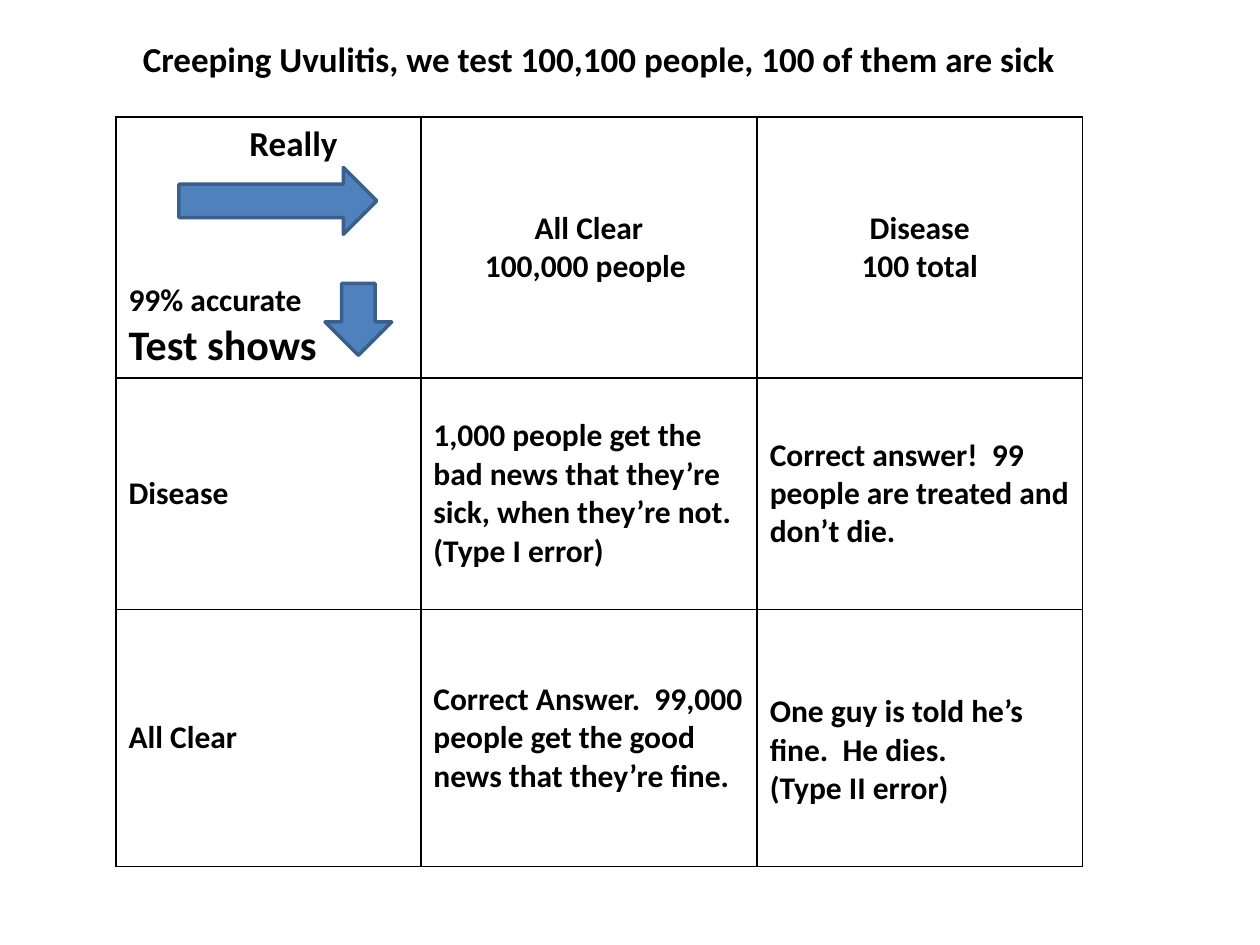
from dataclasses import dataclass

from lxml.etree import SubElement
from pptx import Presentation
from pptx.dml.color import RGBColor
from pptx.enum.shapes import MSO_SHAPE
from pptx.enum.text import MSO_ANCHOR, PP_ALIGN
from pptx.oxml.ns import qn
from pptx.util import Inches, Pt


@dataclass(frozen=True)
class Theme:
    font: str = "Calibri"
    text: str = "000000"
    border: str = "000000"
    arrow_fill: str = "4F81BD"
    arrow_line: str = "3A5F8C"
    body_size: int = 18
    title_size: int = 20
    large_size: int = 24


THEME = Theme()
TABLE_LEFT, TABLE_TOP = 0.92, 0.93
COLUMN_WIDTHS = (2.42, 2.67, 2.58)
ROW_HEIGHTS = (2.06, 1.84, 2.04)

# Each cell is a list of paragraphs
OUTCOMES = [
    [["Really", "99% accurate", "Test shows"],
     ["All Clear", "100,000 people "],
     ["Disease", "100 total"]],
    [["Disease"],
     ["1,000 people get the bad news that they’re sick, when they’re not.",
      "(Type I error)"],
     ["Correct answer!  99 people are treated and don’t die."]],
    [["All Clear"],
     ["Correct Answer.  99,000 people get the good news that they’re fine."],
     ["One guy is told he’s fine.  He dies.", "(Type II error)"]],
]


def write_text(text_frame, lines, size=THEME.body_size, align=PP_ALIGN.LEFT):
    text_frame.text = "\n".join(lines)
    for paragraph in text_frame.paragraphs:
        paragraph.alignment = align
        for run in paragraph.runs:
            font = run.font
            font.name, font.size, font.bold = THEME.font, Pt(size), True
            font.color.rgb = RGBColor.from_string(THEME.text)


def draw_cell_borders(cell):
    properties = cell._tc.get_or_add_tcPr()
    for side in ("a:lnL", "a:lnR", "a:lnT", "a:lnB"):
        line = SubElement(properties, qn(side), w=str(Pt(1)))
        fill = SubElement(line, qn("a:solidFill"))
        SubElement(fill, qn("a:srgbClr"), val=THEME.border)


def add_title(slide, left, top, width, height):
    box = slide.shapes.add_textbox(
        Inches(left), Inches(top), Inches(width), Inches(height))
    box.text_frame.word_wrap = True
    write_text(
        box.text_frame,
        ["Creeping Uvulitis, we test 100,100 people, 100 of them are sick"],
        THEME.title_size, PP_ALIGN.CENTER)


def format_corner(cell):
    cell.vertical_anchor = MSO_ANCHOR.TOP
    really, accuracy, test_shows = cell.text_frame.paragraphs
    really.runs[0].font.size = Pt(THEME.title_size)
    really._p.get_or_add_pPr().set("marL", str(Inches(0.96)))
    accuracy.space_before = Pt(66)  # room for the right arrow
    test_shows.runs[0].font.size = Pt(THEME.large_size)


def add_outcome_table(slide, left, top, column_widths, row_heights):
    frame = slide.shapes.add_table(
        len(row_heights), len(column_widths), Inches(left), Inches(top),
        Inches(sum(column_widths)), Inches(sum(row_heights)))
    table = frame.table
    table.first_row = table.horz_banding = False
    for column, width in zip(table.columns, column_widths):
        column.width = Inches(width)
    for row, height in zip(table.rows, row_heights):
        row.height = Inches(height)

    for row_index, row in enumerate(OUTCOMES):
        for column_index, lines in enumerate(row):
            cell = table.cell(row_index, column_index)
            is_heading = row_index == 0 and column_index > 0
            write_text(cell.text_frame, lines,
                       align=PP_ALIGN.CENTER if is_heading else PP_ALIGN.LEFT)
            cell.vertical_anchor = MSO_ANCHOR.MIDDLE
            draw_cell_borders(cell)
            cell.fill.background()

    format_corner(table.cell(0, 0))
    # The last outcome hangs from the top of its cell
    last_cell = table.cell(2, 2)
    last_cell.vertical_anchor = MSO_ANCHOR.TOP
    last_cell.margin_top = Inches(0.66)


def add_arrow(slide, preset, left, top, width, height):
    arrow = slide.shapes.add_shape(
        preset, Inches(left), Inches(top), Inches(width), Inches(height))
    arrow.shadow.inherit = False
    arrow.fill.solid()
    arrow.fill.fore_color.rgb = RGBColor.from_string(THEME.arrow_fill)
    arrow.line.color.rgb = RGBColor.from_string(THEME.arrow_line)
    arrow.line.width = Pt(2)


def add_corner_arrows(slide, left, top):
    add_arrow(slide, MSO_SHAPE.DOWN_ARROW, left + 1.66, top + 1.32, 0.53, 0.57)
    add_arrow(slide, MSO_SHAPE.RIGHT_ARROW, left + 0.5, top + 0.4, 1.57, 0.53)


def main():
    presentation = Presentation()
    presentation.slide_width = Inches(10)
    presentation.slide_height = Inches(7.5)
    slide = presentation.slides.add_slide(presentation.slide_layouts[6])

    add_outcome_table(slide, TABLE_LEFT, TABLE_TOP, COLUMN_WIDTHS, ROW_HEIGHTS)
    add_corner_arrows(slide, TABLE_LEFT, TABLE_TOP)
    add_title(slide, TABLE_LEFT, 0.25, sum(COLUMN_WIDTHS), 0.44)

    presentation.save("out.pptx")


if __name__ == "__main__":
    main()
